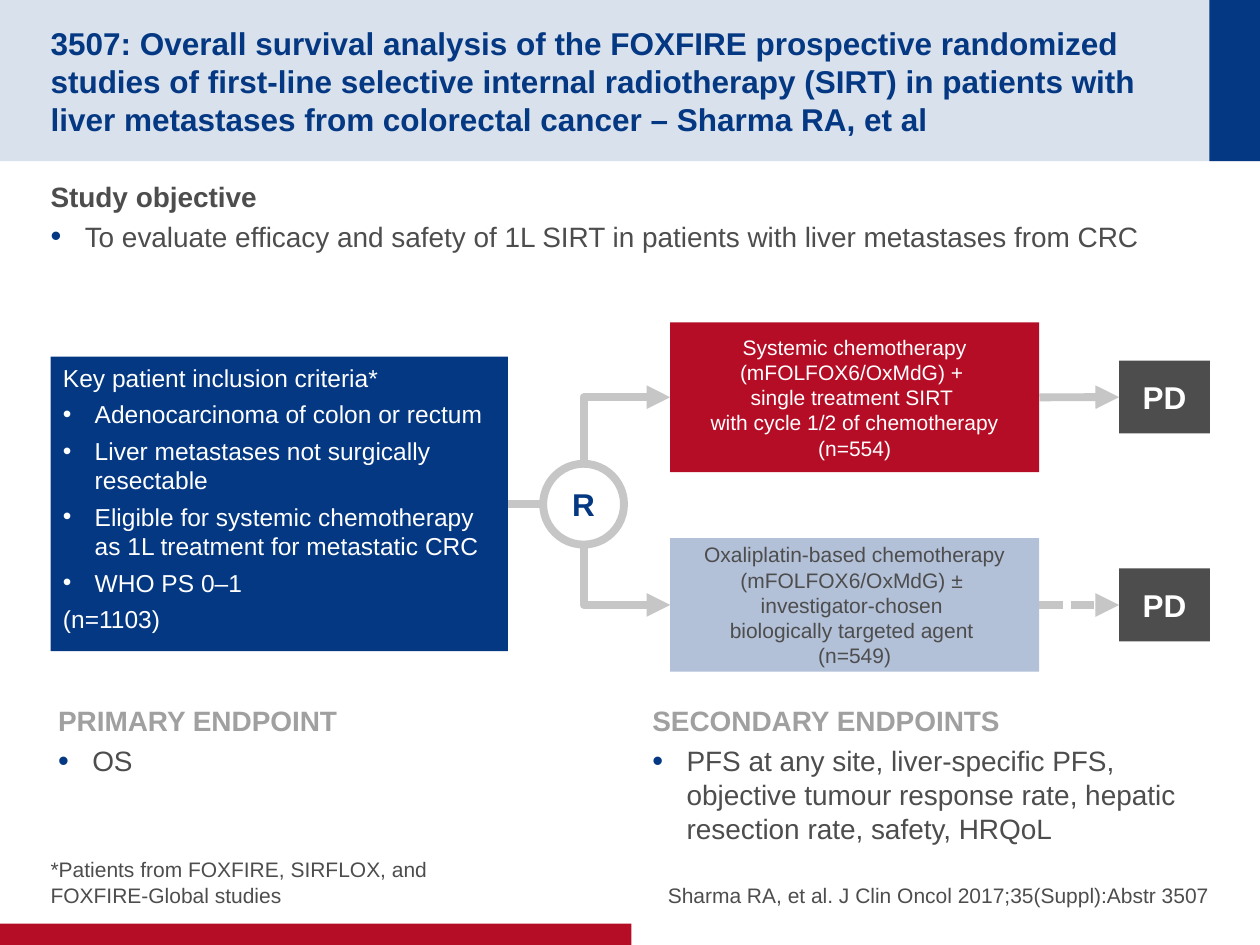
from lxml import etree
from pptx import Presentation
from pptx.dml.color import RGBColor
from pptx.enum.dml import MSO_LINE
from pptx.enum.shapes import MSO_CONNECTOR, MSO_SHAPE
from pptx.enum.text import MSO_ANCHOR, MSO_AUTO_SIZE, PP_ALIGN
from pptx.oxml.ns import qn
from pptx.util import Cm, Pt

RECT, OVAL = MSO_SHAPE.RECTANGLE, MSO_SHAPE.OVAL
LINE, ELBOW = MSO_CONNECTOR.STRAIGHT, MSO_CONNECTOR.ELBOW
TOP, MID, LOW = MSO_ANCHOR.TOP, MSO_ANCHOR.MIDDLE, MSO_ANCHOR.BOTTOM
LEFT, CENTER, RIGHT = PP_ALIGN.LEFT, PP_ALIGN.CENTER, PP_ALIGN.RIGHT
DOTS = MSO_LINE.SQUARE_DOT
FIXED = MSO_AUTO_SIZE.NONE
INK = {"navy": "043882", "pale": "D9E1EC", "red": "B60D27", "blue": "B2C0D8",
       "dark": "4D4D4D", "gray": "A0A0A0", "line": "C6C6C6", "white": "FFFFFF"}


def write(shape, text, size=16, ink="dark", bold=False, align=LEFT, anchor=TOP,
          pad=(0, 0.13), after=0, dent=0, dot=None):
    frame = shape.text_frame
    frame.word_wrap, frame.auto_size = True, FIXED
    frame.vertical_anchor = anchor
    frame.margin_left = frame.margin_right = Cm(pad[0])
    frame.margin_top = frame.margin_bottom = Cm(pad[1])
    para = frame.add_paragraph() if frame.text else frame.paragraphs[0]
    para.text = text
    para.alignment = align
    para.space_before, para.space_after = Pt(0), Pt(after)
    props = para._p.get_or_add_pPr()
    props.set("marL", str(Cm(dent)))
    props.set("indent", str(-Cm(dent)))
    if dent:
        if dot:
            tint = etree.SubElement(props, qn("a:buClr"))
            etree.SubElement(tint, qn("a:srgbClr"), val=INK[dot])
            etree.SubElement(props, qn("a:buSzPct"), val="110000")
        etree.SubElement(props, qn("a:buFont"), typeface="Arial")
        etree.SubElement(props, qn("a:buChar"), char="•")
    else:
        etree.SubElement(props, qn("a:buNone"))
    for run in para.runs:
        run.font.name, run.font.size, run.font.bold = "Arial", Pt(size), bold
        run.font.color.rgb = RGBColor.from_string(INK[ink])
    for gap in para._p.findall(qn("a:br")):
        etree.SubElement(gap, qn("a:rPr"), sz=str(size * 100))


def style(item, head=True):
    item.line.color.rgb = RGBColor.from_string(INK["line"])
    item.line.width = Pt(4.5)
    props = item._element.spPr
    if head:
        etree.SubElement(props.find(qn("a:ln")), qn("a:tailEnd"), type="triangle")
    etree.SubElement(props, qn("a:effectLst"))


deck = Presentation()
deck.slide_width, deck.slide_height = Cm(25.4), Cm(19.05)
slide = deck.slides.add_slide(deck.slide_layouts[4])
shapes = slide.shapes

blocks = {}
for name, x, y, w, h, ink in [
    ("band", 0, 0, 25.4, 3.25, "pale"),
    ("edge", 24.38, 0, 1.02, 3.25, "navy"),
    ("foot", 0, 18.62, 12.73, 0.43, "red"),
    ("entry", 1.02, 7.19, 9.22, 5.94, "navy"),
    ("sirt", 13.51, 6.5, 7.44, 3.02, "red"),
    ("chemo", 13.51, 10.85, 7.44, 2.69, "blue"),
    ("end sirt", 22.56, 7.27, 1.83, 1.47, "dark"),
    ("end chemo", 22.56, 11.46, 1.83, 1.47, "dark"),
]:
    block = shapes.add_shape(RECT, Cm(x), Cm(y), Cm(w), Cm(h))
    block.shadow.inherit = False
    block.fill.solid()
    block.fill.fore_color.rgb = RGBColor.from_string(INK[ink])
    block.line.fill.background()
    blocks[name] = block
for place, name in enumerate(["band", "edge", "foot"], 2):
    shapes._spTree.insert(place, blocks[name]._element)

holders = slide.placeholders
title, note, main, cite, other = [holders[i] for i in range(5)]
goal = shapes.add_textbox(Cm(1.02), Cm(3.48), Cm(23.37), Cm(1.75))
for holder, x, y, w, h in [
    (title, 1.02, 0.51, 22.89, 2.24),
    (note, 1.02, 16.94, 12.5, 1.35),
    (cite, 12.9, 16.94, 11.48, 1.35),
    (main, 1.17, 14.05, 11.48, 3.3),
    (other, 12.9, 14.05, 11.48, 3.38),
]:
    holder.left, holder.top, holder.width, holder.height = Cm(x), Cm(y), Cm(w), Cm(h)

write(title, "3507: Overall survival analysis of the FOXFIRE prospective randomized "
      "studies of first-line selective internal radiotherapy (SIRT) in patients with "
      "liver metastases from colorectal cancer – Sharma RA, et al",
      size=18, ink="navy", bold=True, anchor=MID, pad=(0, 0.06))
write(note, "*Patients from FOXFIRE, SIRFLOX, and \nFOXFIRE-Global studies",
      size=12, anchor=LOW, pad=(0, 0), after=4)
write(cite, "Sharma RA, et al. J Clin Oncol 2017;35(Suppl):Abstr 3507",
      size=12, align=RIGHT, anchor=LOW, pad=(0, 0), after=4)

for box, head, ink, side, item in [
    (goal, "Study objective", "dark", 0,
     "To evaluate efficacy and safety of 1L SIRT in patients with liver metastases from CRC"),
    (main, "PRIMARY ENDPOINT", "gray", 0, "OS"),
    (other, "SECONDARY ENDPOINTS", "gray", 0.25,
     "PFS at any site, liver-specific PFS, objective tumour response rate, "
     "hepatic resection rate, safety, HRQoL"),
]:
    write(box, head, ink=ink, bold=True, pad=(side, 0.13), after=4)
    write(box, item, pad=(side, 0.13), after=4, dent=0.69, dot="navy")

for text, dent in [
    ("Key patient inclusion criteria*", 0),
    ("Adenocarcinoma of colon or rectum", 0.64),
    ("Liver metastases not surgically resectable", 0.64),
    ("Eligible for systemic chemotherapy as 1L treatment for metastatic CRC", 0.64),
    ("WHO PS 0–1", 0.64),
    ("(n=1103)", 0),
]:
    write(blocks["entry"], text, size=14, ink="white", pad=(0.25, 0.13), after=4, dent=dent)

ring = shapes.add_shape(OVAL, Cm(10.95), Cm(9.35), Cm(1.63), Cm(1.63))
ring.shadow.inherit = False
ring.fill.background()
ring.line.color.rgb = RGBColor.from_string(INK["line"])
ring.line.width = Pt(4.5)
write(ring, "R", size=18, ink="navy", bold=True, align=CENTER, anchor=MID, pad=(0, 0))

link = shapes.add_connector(LINE, Cm(10.24), Cm(10.16), ring.left, Cm(10.16))
link.begin_connect(blocks["entry"], 3)
style(link, head=False)

hub = ring.left + ring.width // 2
for name, ink, text, start, turn, flips in [
    ("sirt", "white", "Systemic chemotherapy (mFOLFOX6/OxMdG) + \nsingle treatment SIRT \n"
     "with cycle 1/2 of chemotherapy\n(n=554)", ring.top, 90, "11"),
    ("chemo", "dark", "Oxaliplatin-based chemotherapy (mFOLFOX6/OxMdG) ± \n"
     "investigator-chosen \nbiologically targeted agent \n(n=549)",
     ring.top + ring.height, 270, "10"),
]:
    arm, end = blocks[name], blocks["end " + name]
    write(arm, text, size=12, ink=ink, align=CENTER, anchor=MID, pad=(0.25, 0))
    write(end, "PD", size=18, ink="white", bold=True, align=CENTER, anchor=MID, pad=(0.25, 0))

    level = arm.top + arm.height // 2
    bend = shapes.add_connector(ELBOW, hub, start, arm.left, level)
    bend.end_connect(arm, 1)
    wide, high = arm.left - hub, abs(level - start)
    bend.left, bend.top = (hub + arm.left - high) // 2, (start + level - wide) // 2
    bend.width, bend.height = high, wide
    frame = bend._element.spPr.find(qn("a:xfrm"))
    frame.set("rot", str(turn * 60000))
    frame.set("flipH", flips[0])
    frame.set("flipV", flips[1])
    bend._element.spPr.find(qn("a:prstGeom")).set("prst", "bentConnector2")
    style(bend)

    arrow = shapes.add_connector(LINE, arm.left + arm.width, level, end.left, level)
    arrow.begin_connect(arm, 3)
    arrow.end_connect(end, 1)
    if name == "chemo":
        arrow.line.dash_style = DOTS
    style(arrow)

deck.save("out.pptx")
